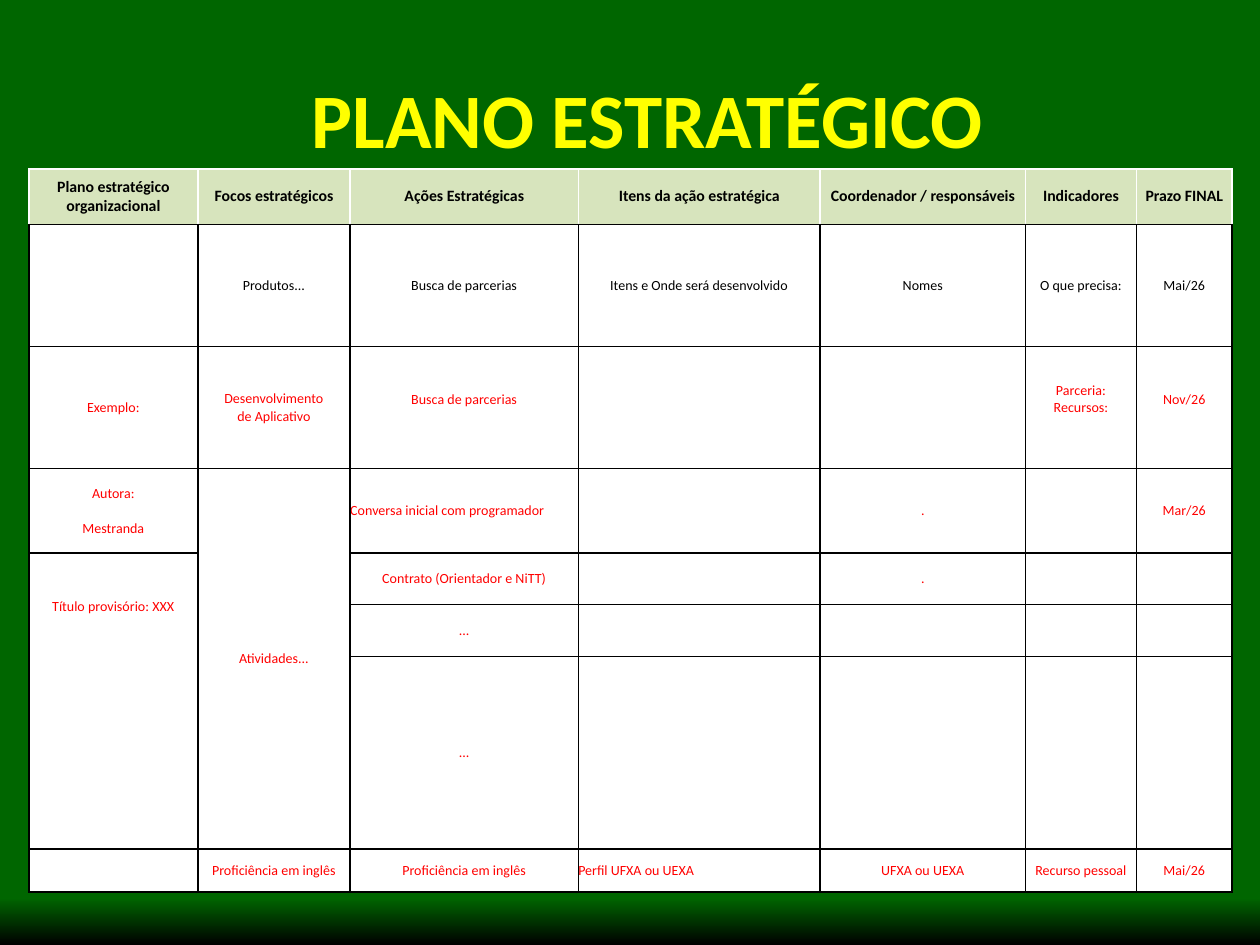
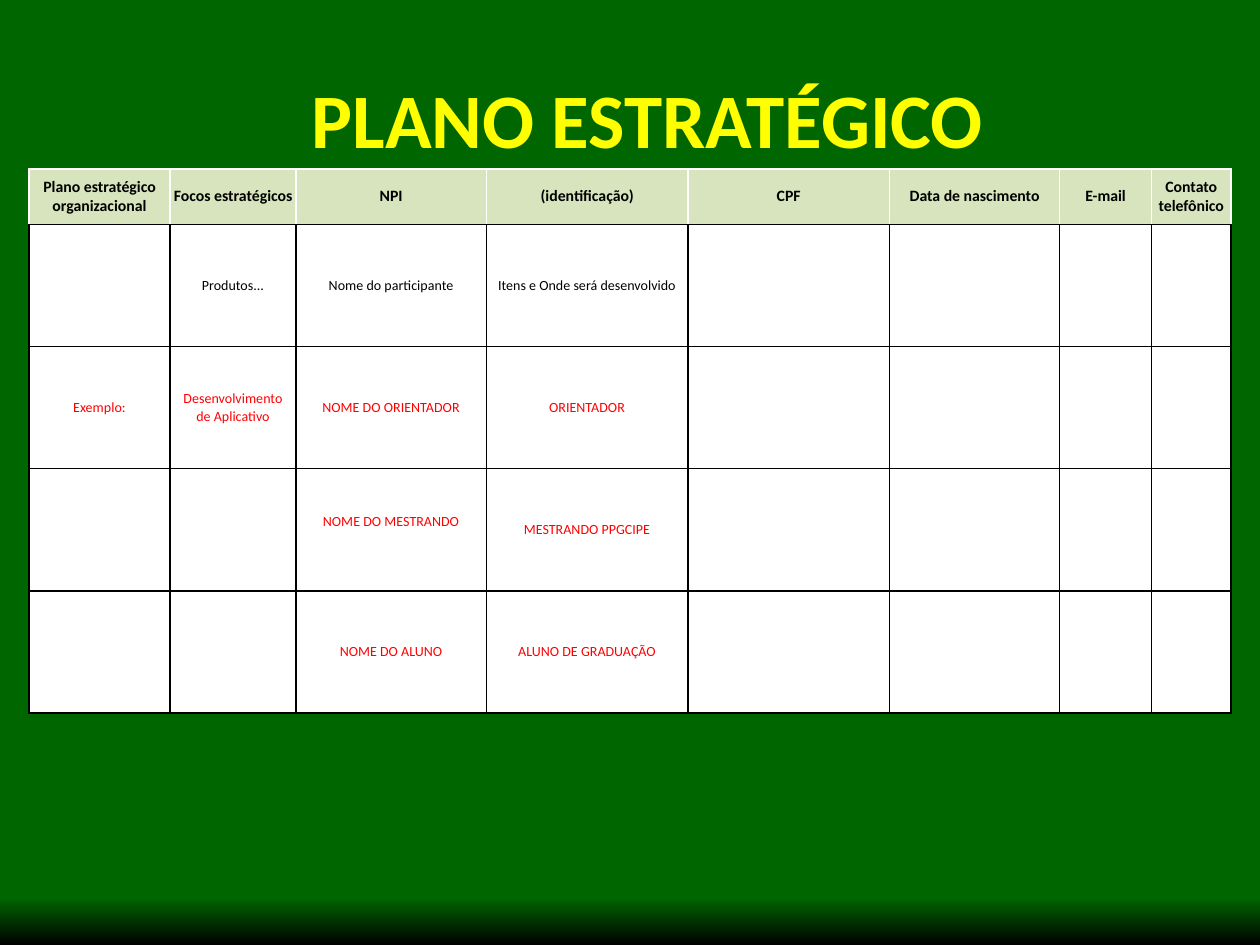
import pptx
import pptx.dml.color
import pptx.enum.text
import pptx.oxml
import pptx.oxml.ns
import pptx.util
from pptx.util import Inches

FONT = "Calibri"
GREEN = "006600"
YELLOW = "FFFF00"
HEADER_GREEN = "D7E4BD"
WHITE = "FFFFFF"
BLACK = "000000"
RED = "FF0000"
TITLE = "PLANO ESTRATÉGICO"
TITLE_ONLY = 5
HEADER_HEIGHT = 0.44
ENTRY_HEIGHT = 0.97
FIRST_EXAMPLE_ROW = 2
ALIGN = pptx.enum.text.PP_ALIGN
ANCHOR = pptx.enum.text.MSO_ANCHOR

ACTION_WIDTHS = [1.34, 1.21, 1.81, 1.92, 1.63, 0.88, 0.76]
ACTION_HEIGHTS = [HEADER_HEIGHT, ENTRY_HEIGHT, ENTRY_HEIGHT, 0.67, 0.41, 0.41, 1.53, 0.34]
ACTION_ROWS = [
    ["Plano estratégico organizacional", "Focos estratégicos", "Ações Estratégicas",
     "Itens da ação estratégica", "Coordenador / responsáveis", "Indicadores", "Prazo FINAL"],
    ["", "Produtos...", "Busca de parcerias", "Itens e Onde será desenvolvido",
     "Nomes", "O que precisa:", "Mai/26"],
    ["Exemplo:", "Desenvolvimento\nde Aplicativo", "Busca de parcerias", "", "",
     "Parceria:\nRecursos:", "Nov/26"],
    ["Autora:\nMestranda", "Atividades...", "Conversa inicial com programador",
     "", ".", "", "Mar/26"],
    ["Título provisório: XXX", "", "Contrato (Orientador e NiTT)", "", ".", "", ""],
    ["", "", "...", "", "", "", ""],
    ["", "", "...", "", "", "", ""],
    ["", "Proficiência em inglês", "Proficiência em inglês", "Perfil UFXA ou UEXA",
     "UFXA ou UEXA", "Recurso pessoal", "Mai/26"],
]

PEOPLE_WIDTHS = [1.12, 1, 1.51, 1.6, 1.6, 1.35, 0.73, 0.63]
PEOPLE_HEIGHTS = [HEADER_HEIGHT] + [ENTRY_HEIGHT] * 4
PEOPLE_ROWS = [
    ["Plano estratégico organizacional", "Focos estratégicos", "NPI", "(identificação)",
     "CPF", "Data de nascimento", "E-mail", "Contato telefônico"],
    ["", "Produtos...", "Nome do participante", "Itens e Onde será desenvolvido",
     "", "", "", ""],
    ["Exemplo:", "Desenvolvimento\nde Aplicativo", "NOME DO ORIENTADOR", "ORIENTADOR",
     "", "", "", ""],
    ["", "", "NOME DO MESTRANDO", "MESTRANDO PPGCIPE", "", "", "", ""],
    ["", "", "NOME DO ALUNO", "ALUNO DE GRADUAÇÃO", "", "", "", ""],
]


def color(value):
    return pptx.dml.color.RGBColor.from_string(value)


def set_font(paragraph, size, value, bold):
    paragraph.font.name = FONT
    paragraph.font.size = pptx.util.Pt(size)
    paragraph.font.bold = bold
    paragraph.font.color.rgb = color(value)


def paint_background(master):
    fill = master.background.fill
    fill.gradient()
    fill.gradient_angle = 270
    for stop, position, value in zip(fill.gradient_stops, (0.95, 1), (GREEN, BLACK)):
        stop.position = position
        stop.color.rgb = color(value)


def add_page(deck):
    page = deck.slides.add_slide(deck.slide_layouts[TITLE_ONLY])
    title = page.shapes.title
    title.left, title.top = Inches(0.64), Inches(0.31)
    title.width, title.height = Inches(9), Inches(1.25)
    title.text_frame.text = TITLE
    title.text_frame.vertical_anchor = ANCHOR.MIDDLE
    paragraph = title.text_frame.paragraphs[0]
    paragraph.alignment = ALIGN.CENTER
    set_font(paragraph, 44, YELLOW, True)
    return page


def set_borders(cell, side_colors):
    properties = cell._tc.get_or_add_tcPr()
    for side, value in zip("LRTB", side_colors):
        properties.append(pptx.oxml.parse_xml(
            f'<a:ln{side} {pptx.oxml.ns.nsdecls("a")} w="12700"><a:solidFill>'
            f'<a:srgbClr val="{value}"/></a:solidFill></a:ln{side}>'))


def format_cell(cell, text, row_index):
    is_header = row_index == 0
    set_borders(cell, [WHITE] * 3 + [BLACK] if is_header else [BLACK] * 4)
    cell.fill.solid()
    cell.fill.fore_color.rgb = color(HEADER_GREEN if is_header else WHITE)
    cell.margin_left = cell.margin_right = cell.margin_top = cell.margin_bottom = 0
    cell.vertical_anchor = ANCHOR.MIDDLE
    cell.text = text
    for paragraph in cell.text_frame.paragraphs:
        paragraph.alignment = ALIGN.CENTER
        set_font(paragraph, 9 if is_header else 8,
                 RED if row_index >= FIRST_EXAMPLE_ROW else BLACK, is_header)


def add_plan_table(page, rows, widths, heights):
    table = page.shapes.add_table(
        len(rows), len(widths), Inches(0.23), Inches(1.34),
        Inches(sum(widths)), Inches(sum(heights))).table
    table.first_row = False
    table.horz_banding = False
    for column, width in zip(table.columns, widths):
        column.width = Inches(width)
    for row_index, (row, height) in enumerate(zip(rows, heights)):
        table.rows[row_index].height = Inches(height)
        for column_index, text in enumerate(row):
            format_cell(table.cell(row_index, column_index), text, row_index)
    return table


def raise_text(table, positions):
    for row, column in positions:
        table.cell(row, column).margin_bottom = Inches(0.13)


def add_action_plan(deck):
    table = add_plan_table(add_page(deck), ACTION_ROWS, ACTION_WIDTHS, ACTION_HEIGHTS)
    raise_text(table, [(2, 2), (2, 5), (2, 6)])
    for row, column in [(3, 2), (7, 3)]:
        table.cell(row, column).text_frame.paragraphs[0].alignment = ALIGN.LEFT
    table.cell(3, 0).text_frame.paragraphs[0].space_after = pptx.util.Pt(10)
    table.cell(3, 1).merge(table.cell(6, 1))
    provisional_title = table.cell(4, 0)
    provisional_title.merge(table.cell(6, 0))
    provisional_title.vertical_anchor = ANCHOR.TOP
    provisional_title.margin_top = Inches(0.36)


def add_people_plan(deck):
    table = add_plan_table(add_page(deck), PEOPLE_ROWS, PEOPLE_WIDTHS, PEOPLE_HEIGHTS)
    raise_text(table, [(3, 2)])


def main():
    deck = pptx.Presentation()
    deck.slide_width, deck.slide_height = Inches(10), Inches(7.5)
    paint_background(deck.slide_master)
    add_action_plan(deck)
    add_people_plan(deck)
    deck.save("out.pptx")


if __name__ == "__main__":
    main()
